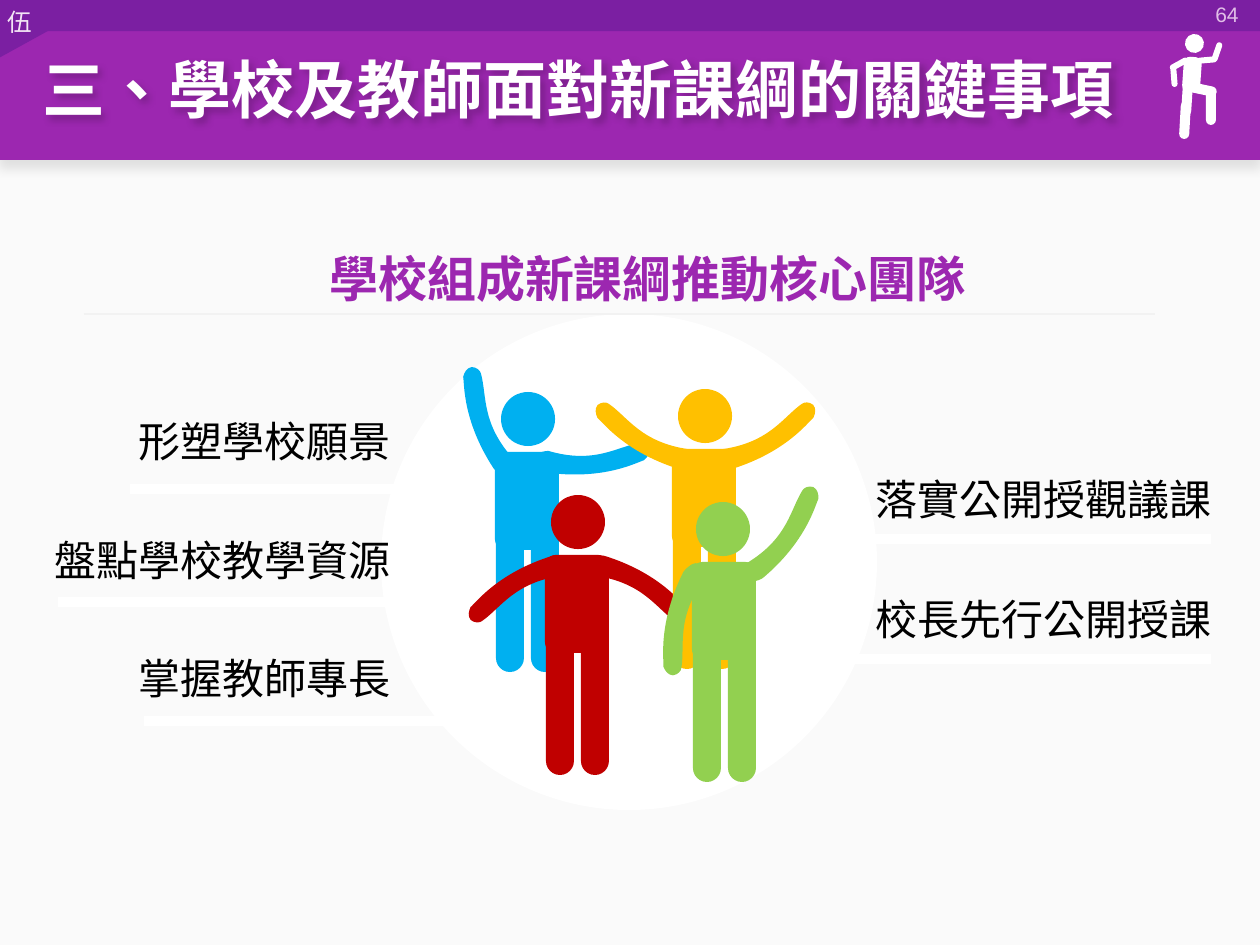
from dataclasses import dataclass

from lxml import etree
from pptx import Presentation
from pptx.dml.color import RGBColor
from pptx.enum import shapes, text
from pptx.oxml import parse_xml
from pptx.oxml.ns import nsdecls, qn
from pptx.util import Pt

PX = 914400 / 126  # EMU in one px


@dataclass(frozen=True)
class Theme:
    cjk: str = "Noto Sans CJK SC"
    latin: str = "Arial"
    panel: str = "FAFAFA"
    band: str = "9C27B0"
    strip: str = "7B1FA2"
    white: str = "FFFFFF"
    black: str = "000000"
    corner: str = "F3E5F5"
    number: str = "E1BEE7"
    rule: str = "F2F2F2"
    blue: str = "00B0F0"
    red: str = "C00000"
    yellow: str = "FFC000"
    green: str = "92D050"
    title_size: int = 36
    heading_size: int = 28
    label_size: int = 24
    corner_size: int = 14
    number_size: int = 12


THEME = Theme()
KIND = shapes.MSO_SHAPE
ALIGN = text.PP_ALIGN

# Arm hanging down in its box: start, then cubic curves
ARM_WIDTH, ARM_HEIGHT = 36, 113
ARM_START = (36, 15)
ARM_CURVES = [
    ((38, 6), (35, 1), (31, 0)),
    ((25, -3), (18, 4), (15, 9)),
    ((-7, 62), (2, 98), (2, 105)),
    ((4, 109), (7, 113), (12, 113)),
    ((17, 112), (20, 108), (20, 105)),
    ((22, 82), (11, 56), (36, 15)),
]


def emu(*lengths):
    return [round(length * PX) for length in lengths]


def paint(shape, color):
    shape.fill.solid()
    shape.fill.fore_color.rgb = RGBColor.from_string(color)
    shape.line.fill.background()
    shape.shadow.inherit = False
    return shape


def add_part(page, kind, box, color, turn=0, corner=None):
    shape = page.shapes.add_shape(kind, *emu(*box))
    shape.rotation = turn
    if corner is not None:
        shape.adjustments[0] = corner
    return paint(shape, color)


def add_outline(page, points, color):
    first, *rest = [emu(*point) for point in points]
    builder = page.shapes.build_freeform(*first, scale=1.0)
    builder.add_line_segments(rest, close=True)
    return paint(builder.convert_to_shape(), color)


def add_line(page, left, right, y, color, width):
    line = page.shapes.add_connector(shapes.MSO_CONNECTOR.STRAIGHT, *emu(left, y, right, y))
    line.line.color.rgb = RGBColor.from_string(color)
    line.line.width = Pt(width)
    line._element.spPr.append(parse_xml(f"<a:effectLst {nsdecls('a')}/>"))


def cast_shadow(shape, blur, distance, angle, alpha):
    shape.shadow.inherit = False
    effects = shape._element.spPr.find(qn("a:effectLst"))
    effects.append(parse_xml(
        f'<a:outerShdw {nsdecls("a")} blurRad="{Pt(blur)}" dist="{Pt(distance)}" '
        f'dir="{angle * 60000}" algn="t" rotWithShape="0"><a:srgbClr val="{THEME.black}">'
        f'<a:alpha val="{alpha * 1000}"/></a:srgbClr></a:outerShdw>'))


def add_text(page, words, box, size, color, bold=False, align=ALIGN.LEFT,
             anchor=text.MSO_ANCHOR.TOP, font=THEME.cjk):
    shape = page.shapes.add_textbox(*emu(*box))
    frame = shape.text_frame
    frame.word_wrap = False
    frame.vertical_anchor = anchor
    para = frame.paragraphs[0]
    span = para.add_run()
    span.text = words
    span.font._element.set("lang", "zh-TW")
    para.alignment = align
    para.font.size = Pt(size)
    para.font.bold = bold
    para.font.color.rgb = RGBColor.from_string(color)
    para.font.name = font
    para.font._element.find(qn("a:latin")).addnext(
        parse_xml(f'<a:ea {nsdecls("a")} typeface="{font}"/>'))
    return shape


def add_climber(page, box):
    x, y = box[:2]
    # Head, then rounded body and limbs: left, top, width, height, turn, corner
    add_part(page, KIND.FLOWCHART_CONNECTOR, (x + 16, y + 1, 19, 19), THEME.white, 352)
    for left, top, width, height, turn, corner in [
        (37, 54, 10, 38, 0, 0.5),
        (14, 24, 18, 35, 4.1, 0.34),
        (2, 34, 6, 20, 355.4, 0.5),
        (7, 21, 6, 20, 241.2, 0.5),
        (45, 9, 6, 20, 19, 0.5),
        (35, 17, 6, 20, 264.9, 0.5),
        (26, 39, 10, 34, 282, 0.5),
        (11, 68, 10, 38, 183.3, 0.5),
        (13, 49, 10, 34, 3.7, 0.5),
    ]:
        add_part(page, KIND.ROUNDED_RECTANGLE, (x + left, y + top, width, height),
                 THEME.white, turn, corner)


def add_header(page, box):
    x, y, width, height = box
    band = add_part(page, KIND.ROUNDED_RECTANGLE, box, THEME.band, corner=0)
    cast_shadow(band, 6, 4, 90, 10)
    # Dark strip with its corner fold
    add_part(page, KIND.ROUNDED_RECTANGLE, (x, y - 3, width, 34), THEME.strip, corner=0)
    add_outline(page, [(x, y + 31), (x, y + 58), (x + 49, y + 31)], THEME.strip)
    add_text(page, "伍", (x - 4, y + 1, 50, 43), THEME.corner_size, THEME.corner)
    add_climber(page, (x + 1170, y + 33, 54, 106))
    # Page number and title
    add_text(page, "64", (x + 959, y - 11, 293, 50), THEME.number_size, THEME.number,
             align=ALIGN.RIGHT, anchor=text.MSO_ANCHOR.MIDDLE, font=THEME.latin)
    title = add_text(page, "三、學校及教師面對新課綱的關鍵事項", (x + 31, y + 26, 1097, 124),
                     THEME.title_size, THEME.white, bold=True, anchor=text.MSO_ANCHOR.MIDDLE)
    cast_shadow(title, 4, 3, 45, 20)


def add_heading(page, box):
    x, y, width, height = box
    add_text(page, "學校組成新課綱推動核心團隊", (x + 233, y, 669, height),
             THEME.heading_size, THEME.band, bold=True)
    add_line(page, x, x + width, y + height, THEME.rule, 1.5)


def add_arm(page, x, y, turn, flip_x, flip_y, color):
    """Turn an arm clockwise in the box at x, y, after flipping its outline."""
    right, bottom = x + ARM_WIDTH, y + ARM_HEIGHT
    arm = add_outline(page, [(x, y), (right, y), (right, bottom), (x, bottom)], color)
    arm.rotation = turn
    path = arm._element.spPr.find(".//" + qn("a:path"))
    for segment in list(path):
        path.remove(segment)
    for tag, points in [("a:moveTo", [ARM_START])] + [("a:cubicBezTo", c) for c in ARM_CURVES]:
        segment = etree.SubElement(path, qn(tag))
        for px, py in points:
            px, py = emu(ARM_WIDTH - px if flip_x else px, ARM_HEIGHT - py if flip_y else py)
            etree.SubElement(segment, qn("a:pt"), x=str(px), y=str(py))
    etree.SubElement(path, qn("a:close"))


def add_person(page, x, y, head, color, arms):
    """Draw a figure whose torso starts at x, y."""
    add_part(page, KIND.FLOWCHART_CONNECTOR, (x + head, y - 60, 54, 54), color)
    add_part(page, KIND.ROUNDED_RECTANGLE, (x, y, 64, 98), color)
    for leg in (36, 1):
        add_part(page, KIND.ROUNDED_RECTANGLE, (x + leg, y + 75, 28, 145), color, corner=0.5)
    for dx, dy, turn, flip_x, flip_y in arms:
        add_arm(page, x + dx, y + dy, turn, flip_x, flip_y, color)


def add_team(page, box):
    x, y = box[:2]
    add_part(page, KIND.OVAL, box, THEME.white)
    # Torso offset, head inset, colour, arms: offset, turn, horizontal and vertical flip
    for left, top, head, color, arms in [
        (114, 138, 6, THEME.blue, [(80, -51, 74.9, True, True), (-25, -87, 349.3, False, True)]),
        (164, 241, 6, THEME.red, [(-45, -23, 50.2, False, False), (76, -23, 309.8, True, False)]),
        (291, 135, 6, THEME.yellow, [(-45, -69, 309.8, False, True), (76, -69, 50.2, True, True)]),
        (311, 248, 4, THEME.green, [(-27, 1, 4.2, False, False), (72, -84, 27.3, True, True)]),
    ]:
        add_person(page, x + left, y + top, head, color, arms)


def add_labels(page, box, items):
    x, y = box[:2]
    for words, left, top, width, start, end, rule in items:
        add_text(page, words, (x + left, y + top, width, 63), THEME.label_size, THEME.black)
        add_line(page, x + start, x + end, y + rule, THEME.white, 6)


def main():
    deck = Presentation()
    deck.slide_width, deck.slide_height = emu(1260, 945)
    page = deck.slides.add_slide(deck.slide_layouts[6])

    add_part(page, KIND.RECTANGLE, (-1, 55, 1263, 890), THEME.panel)
    add_header(page, (-1, 0, 1261, 160))
    add_team(page, (381, 314, 496, 496))
    add_heading(page, (84, 242, 1071, 72))
    # Label text, left, top, width; underline start, end, height
    add_labels(page, (42, 409, 364, 300), [
        ("盤點學校教學資源", 0, 119, 364, 16, 347, 193),
        ("掌握教師專長", 84, 237, 280, 102, 434, 312),
        ("形塑學校願景", 84, 0, 280, 88, 419, 80),
    ])
    add_labels(page, (863, 467, 364, 183), [
        ("校長先行公開授課", 0, 120, 364, -19, 348, 192),
        ("落實公開授觀議課", 0, 0, 364, -5, 348, 72),
    ])
    deck.save("out.pptx")


if __name__ == "__main__":
    main()
